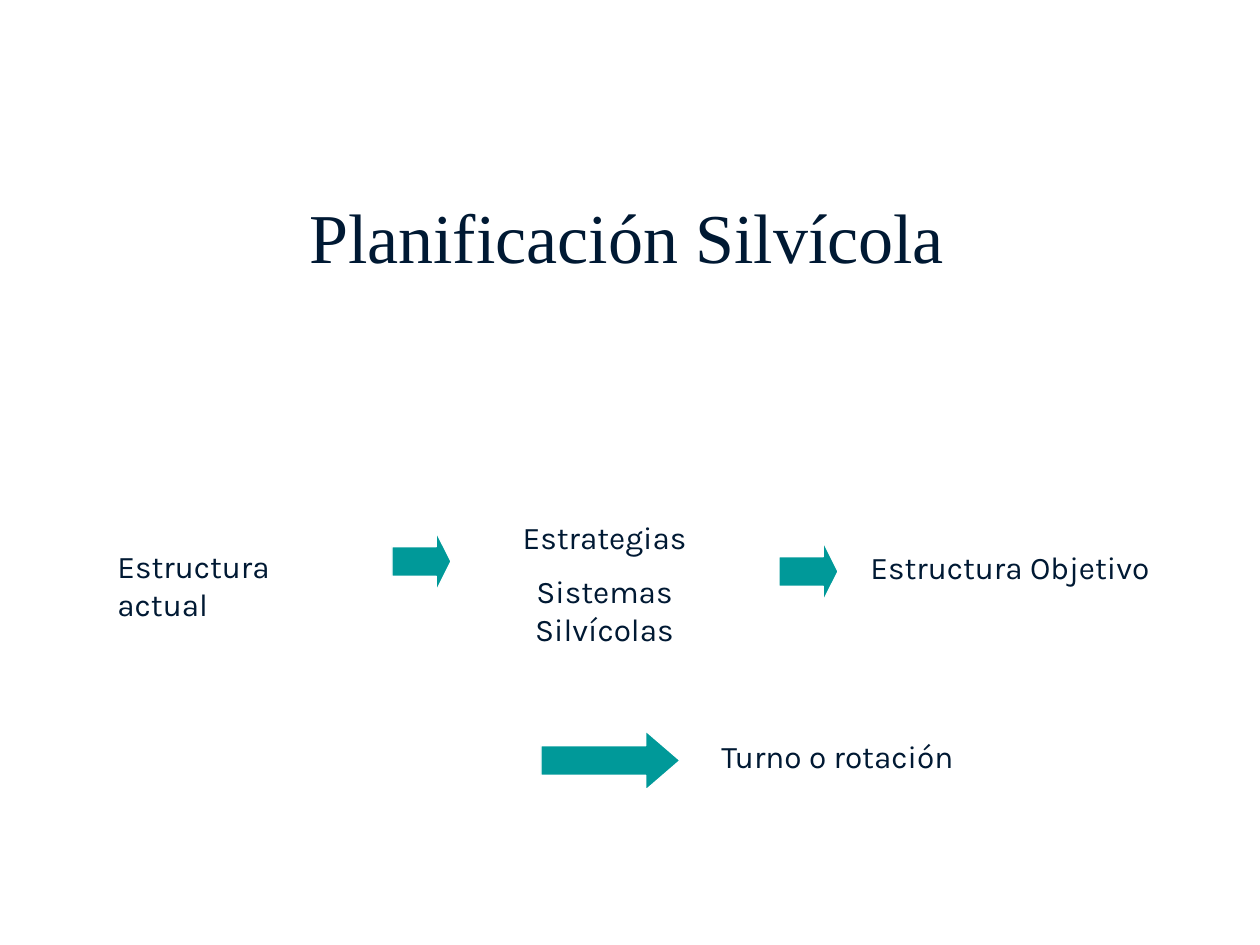
from pptx import Presentation
from pptx.dml.color import RGBColor
from pptx.enum.shapes import MSO_SHAPE
from pptx.enum.text import MSO_ANCHOR, PP_ALIGN
from pptx.util import Emu, Pt

EMU_PER_PX = 914400 / 126
COLORS = {"ink": "001933", "arrow": "009999", "outline": "FFFFFF"}


def px(length):
    return Emu(round(length * EMU_PER_PX))


def color(name):
    return RGBColor.from_string(COLORS[name])


def add_text(slide, box, lines, font="Karla", size=18,
             align=PP_ALIGN.LEFT, anchor=MSO_ANCHOR.TOP):
    frame = slide.shapes.add_textbox(*map(px, box)).text_frame
    frame.word_wrap = True
    frame.vertical_anchor = anchor
    for index, line in enumerate(lines):
        paragraph = frame.add_paragraph() if index else frame.paragraphs[0]
        paragraph.alignment = align
        if index:
            paragraph.space_before = Pt(size / 2)
        run = paragraph.add_run()
        run.text = line
        run.font.name = font
        run.font.size = Pt(size)
        run.font.color.rgb = color("ink")


def add_arrow(slide, box, head):
    arrow = slide.shapes.add_shape(MSO_SHAPE.RIGHT_ARROW, *map(px, box))
    arrow.adjustments[0] = 0.5
    arrow.adjustments[1] = head
    arrow.shadow.inherit = False
    arrow.fill.solid()
    arrow.fill.fore_color.rgb = color("arrow")
    arrow.line.color.rgb = color("outline")
    arrow.line.width = Pt(0.75)


def main():
    presentation = Presentation()
    presentation.slide_width = px(1260)
    presentation.slide_height = px(945)
    slide = presentation.slides.add_slide(presentation.slide_layouts[6])

    add_text(slide, (147, 199, 977, 73), ["Planificación Silvícola "],
             font="Times New Roman", size=40,
             align=PP_ALIGN.CENTER, anchor=MSO_ANCHOR.MIDDLE)

    add_text(slide, (105, 541, 267, 50), ["Estructura actual"])
    add_text(slide, (451, 512, 307, 107),
             ["Estrategias", "Sistemas Silvícolas"], align=PP_ALIGN.CENTER)
    add_text(slide, (858, 542, 318, 50), ["Estructura Objetivo"])
    add_text(slide, (709, 731, 267, 50), ["Turno o rotación"])

    for left, top, width, head in [
        (392, 532, 59, 0.25),
        (779, 542, 59, 0.25),
        (541, 731, 139, 0.58),
    ]:
        add_arrow(slide, (left, top, width, 59), head)

    presentation.save("out.pptx")


if __name__ == "__main__":
    main()
